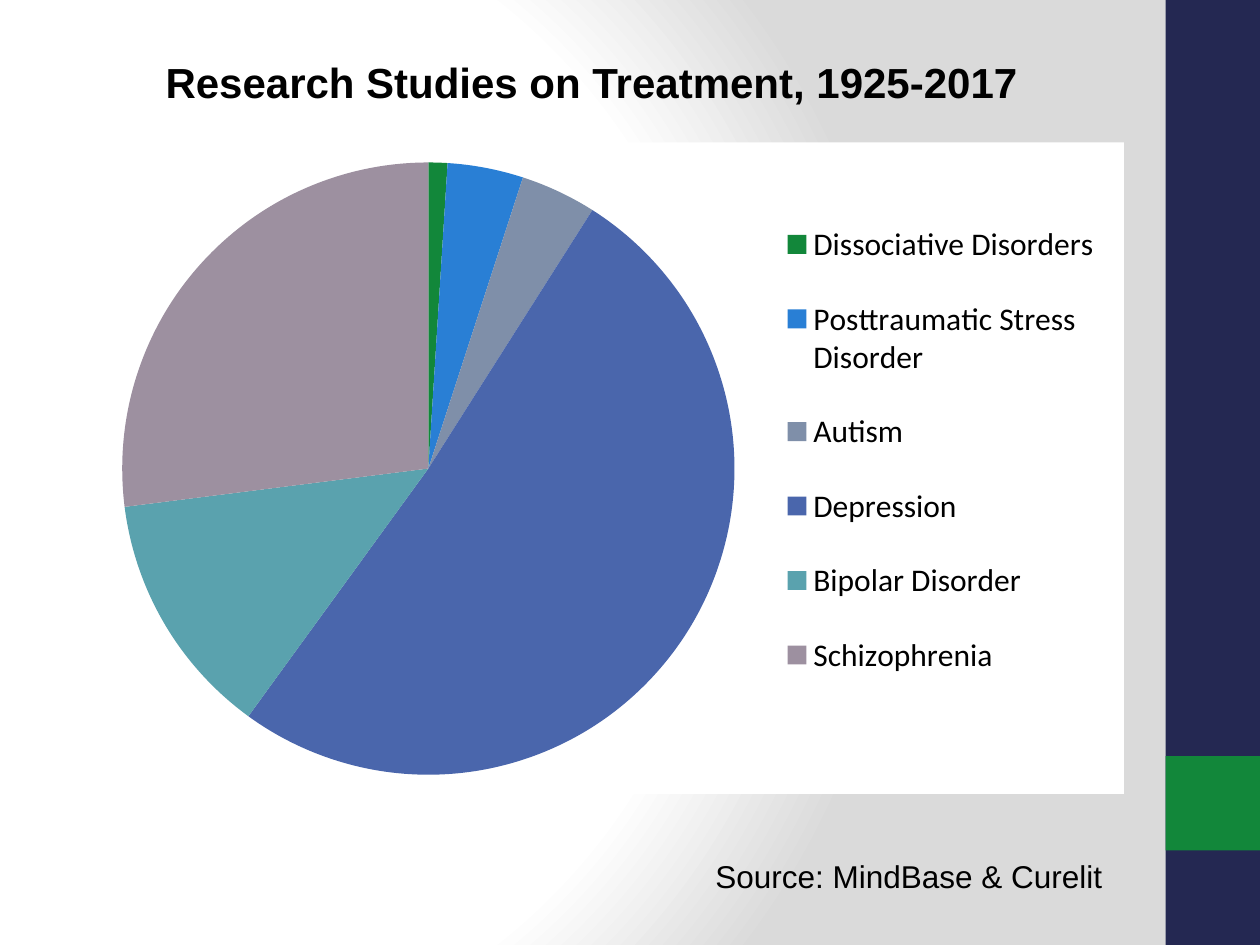
from lxml import etree
from pptx import Presentation
from pptx import util as u
from pptx.chart.data import CategoryChartData
from pptx.dml.color import RGBColor
from pptx.enum import chart as ch, shapes, text
from pptx.oxml import parse_xml
from pptx.oxml.ns import nsdecls, qn

NAVY, GREEN, WHITE, GREY, BLACK = "242852", "12873A", "FFFFFF", "DADADA", "000000"
STUDIES = [
    ("Dissociative Disorders", 1, GREEN),
    ("Posttraumatic Stress Disorder", 4, "297FD5"),
    ("Autism", 4, "7F8FA9"),
    ("Depression", 51, "4A66AC"),
    ("Bipolar Disorder", 13, "5AA2AE"),
    ("Schizophrenia", 27, "9D90A0"),
]


def paint(fill, color):
    fill.solid()
    fill.fore_color.rgb = RGBColor.from_string(color)


def place(sp, box):
    sp.left, sp.top, sp.width, sp.height = (u.Inches(v) for v in box)


def style_font(font, name, size, bold=False):
    font.name, font.size, font.bold = name, u.Pt(size), bold
    font.color.rgb = RGBColor.from_string(BLACK)


def set_background(slide):
    """Radial gradient, white in the left middle and grey at the right."""
    stops = "".join(
        f'<a:gs pos="{pos * 1000}"><a:srgbClr val="{color}"/></a:gs>'
        for pos, color in [(0, WHITE), (75, WHITE), (100, GREY)])
    slide.background.fill.solid()
    bg_pr = slide.element.cSld.find(qn("p:bg")).find(qn("p:bgPr"))
    bg_pr.replace(bg_pr[0], parse_xml(
        f'<a:gradFill {nsdecls("a")} rotWithShape="1"><a:gsLst>{stops}</a:gsLst>'
        '<a:path path="circle"><a:fillToRect l="20000" t="50000" r="100000" b="50000"/>'
        '</a:path></a:gradFill>'))


def add_side_band(slide, box):
    """Full-height band with a square accent four fifths of the way down."""
    x, y, w, h = box
    for part, color in [(box, NAVY), ((x, y + 0.8 * h, w, w), GREEN)]:
        sp = slide.shapes.add_shape(shapes.MSO_SHAPE.RECTANGLE,
                                    *(u.Inches(v) for v in part))
        sp.shadow.inherit = False
        paint(sp.fill, color)
        sp.line.fill.background()


def add_study_chart(slide, box):
    names, values, colors = zip(*STUDIES)
    data = CategoryChartData()
    data.categories = names
    data.add_series("Series 1", values)
    chart = slide.shapes.add_chart(ch.XL_CHART_TYPE.PIE,
                                   *(u.Inches(v) for v in box), data).chart
    chart.has_title = False
    style_font(chart.font, "Calibri", 18)
    chart.has_legend = True
    chart.legend.position = ch.XL_LEGEND_POSITION.RIGHT
    chart.legend.include_in_layout = False

    plot = chart.plots[0]
    plot.vary_by_categories = True
    for i, color in enumerate(colors):
        paint(plot.series[0].points[i].format.fill, color)

    space = chart.element
    space.find(qn("c:txPr")).addprevious(parse_xml(
        f'<c:spPr {nsdecls("c", "a")}><a:solidFill><a:srgbClr val="{WHITE}"/>'
        '</a:solidFill><a:ln><a:noFill/></a:ln></c:spPr>'))
    body, size = space.find(qn("c:chart")), box[2:]
    set_layout(body.find(qn("c:plotArea")), 0, (0.22, 0.16, 4.86, 4.86), size, inner=True)
    set_layout(body.find(qn("c:legend")), 1, (5.4, 0.37, 2.63, 4.14), size)


def set_layout(parent, index, box, size, inner=False):
    """Fix a chart part to a box in inches within a chart of the given size."""
    for old in parent.findall(qn("c:layout")):
        parent.remove(old)
    layout = etree.Element(qn("c:layout"))
    manual = etree.SubElement(layout, qn("c:manualLayout"))
    settings = [("layoutTarget", "inner")] if inner else []
    settings += [("xMode", "edge"), ("yMode", "edge")]
    settings += [(tag, f"{v / full:.4f}") for tag, v, full in zip("xywh", box, size * 2)]
    for tag, val in settings:
        etree.SubElement(manual, qn(f"c:{tag}")).set("val", val)
    parent.insert(index, layout)


def write_line(sp, box, words, size, align, bold=False):
    place(sp, box)
    tf = sp.text_frame
    tf.word_wrap = True
    tf.auto_size = text.MSO_AUTO_SIZE.SHAPE_TO_FIT_TEXT
    tf.vertical_anchor = text.MSO_ANCHOR.TOP
    p = tf.paragraphs[0]
    p.text = words
    p.alignment = align
    style_font(p.font, "Arial", size, bold)


def build_slide(prs):
    slide = prs.slides.add_slide(prs.slide_layouts.get_by_name("Title Only"))
    set_background(slide)
    add_side_band(slide, (9.25, 0, 0.75, 7.5))
    add_study_chart(slide, (0.75, 1.13, 8.17, 5.17))
    write_line(slide.shapes.title, (0.53, 0.4, 8.33, 0.5),
               "Research Studies on Treatment, 1925-2017", 24,
               text.PP_ALIGN.CENTER, bold=True)
    source = slide.shapes.add_textbox(0, 0, 0, 0)
    write_line(source, (5.58, 6.75, 3.75, 0.4),
               "Source: MindBase & Curelit", 18, text.PP_ALIGN.LEFT)


def main():
    prs = Presentation()
    prs.slide_width, prs.slide_height = u.Inches(10), u.Inches(7.5)
    build_slide(prs)
    prs.save("out.pptx")


if __name__ == "__main__":
    main()
